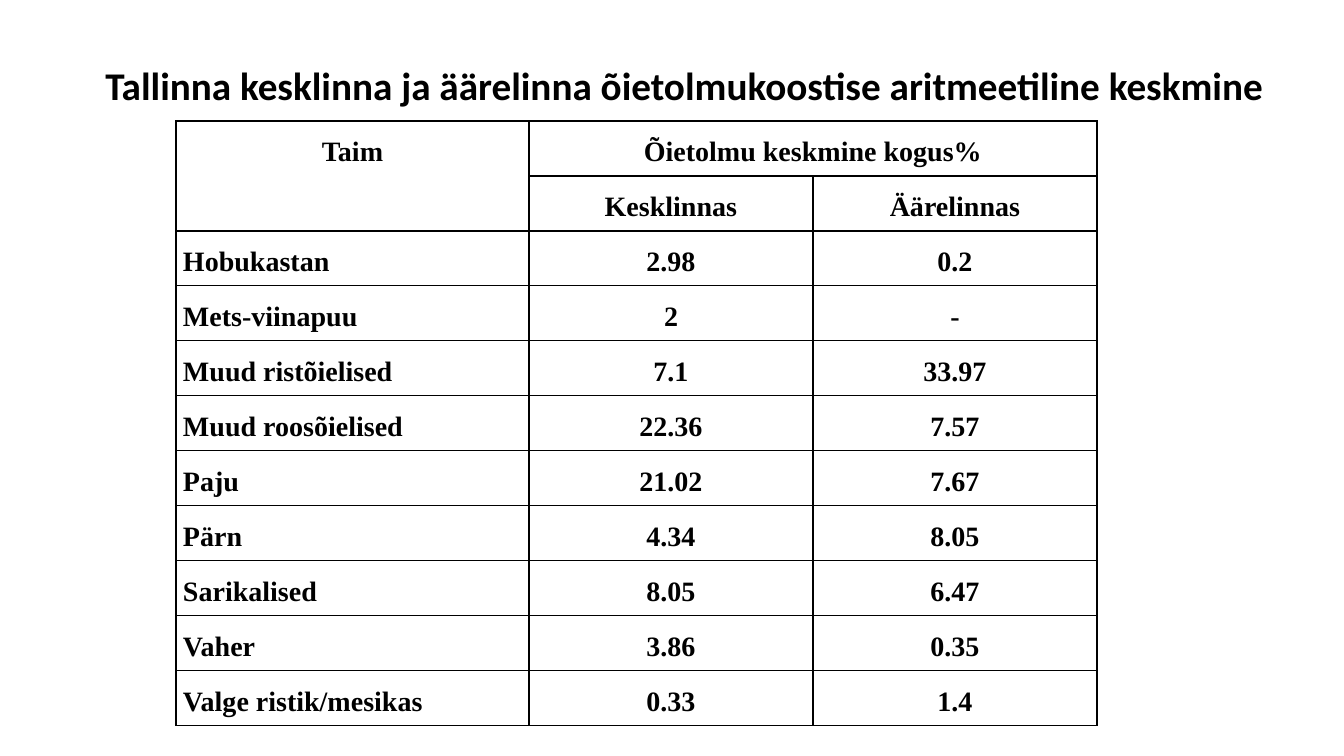
from dataclasses import dataclass

import pptx
import pptx.dml.color
import pptx.enum.text
import pptx.oxml
import pptx.oxml.ns
import pptx.util

PX = 914400 / 100.8
ALIGN = pptx.enum.text.PP_ALIGN
ANCHOR = pptx.enum.text.MSO_ANCHOR


@dataclass(frozen=True)
class Theme:
    ink: str = "000000"
    title_font: str = "Calibri"
    title_size: int = 28
    table_font: str = "Times New Roman"
    table_size: int = 20
    border: int = 1


THEME = Theme()
TITLE = "Tallinna kesklinna ja äärelinna õietolmukoostise aritmeetiline keskmine"
COLUMN_WIDTHS = (353, 284, 284)
ROW_HEIGHT = 55
HEADER_ROWS = 2
ROWS = [
    ("Taim", "Õietolmu keskmine kogus%", ""),
    ("", "Kesklinnas", "Äärelinnas"),
    ("Hobukastan", "2.98", "0.2"),
    ("Mets-viinapuu", "2", "-"),
    ("Muud ristõielised", "7.1", "33.97"),
    ("Muud roosõielised", "22.36", "7.57"),
    ("Paju", "21.02", "7.67"),
    ("Pärn", "4.34", "8.05"),
    ("Sarikalised", "8.05", "6.47"),
    ("Vaher", "3.86", "0.35"),
    ("Valge ristik/mesikas", "0.33", "1.4"),
]


def px(n):
    return pptx.util.Emu(round(n * PX))


def write(p, text, font, size, align, spacing):
    p.alignment = align
    p.line_spacing = spacing
    p.space_before = pptx.util.Pt(10)
    r = p.add_run()
    r.text = text
    r.font.name = font
    r.font.size = pptx.util.Pt(size)
    r.font.bold = True
    r.font.color.rgb = pptx.dml.color.RGBColor.from_string(THEME.ink)


def add_borders(cell):
    tc_pr = cell._tc.get_or_add_tcPr()
    ns = pptx.oxml.ns.nsdecls("a")
    for side in "LRTB":
        tc_pr.append(pptx.oxml.parse_xml(
            f'<a:ln{side} {ns} w="{pptx.util.Pt(THEME.border)}"><a:solidFill>'
            f'<a:srgbClr val="{THEME.ink}"/></a:solidFill></a:ln{side}>'))


def place_title(s, x, y, w, h):
    sp = s.shapes.title
    sp.left, sp.top, sp.width, sp.height = map(px, (x, y, w, h))
    tf = sp.text_frame
    tf.word_wrap = True
    tf.auto_size = pptx.enum.text.MSO_AUTO_SIZE.NONE
    tf.vertical_anchor = ANCHOR.MIDDLE
    tf.margin_left = tf.margin_right = tf.margin_top = tf.margin_bottom = 0
    write(tf.paragraphs[0], TITLE, THEME.title_font, THEME.title_size,
          ALIGN.CENTER, 0.9)


def place_pollen_table(s, x, y):
    frame = s.shapes.add_table(len(ROWS), len(COLUMN_WIDTHS), px(x), px(y),
                               px(sum(COLUMN_WIDTHS)), px(ROW_HEIGHT * len(ROWS)))
    table = frame.table
    table.first_row = table.horz_banding = False
    for column, width in zip(table.columns, COLUMN_WIDTHS):
        column.width = px(width)
    for i, values in enumerate(ROWS):
        table.rows[i].height = px(ROW_HEIGHT)
        for j, value in enumerate(values):
            cell = table.cell(i, j)
            cell.margin_left = cell.margin_right = px(7)
            cell.margin_top = cell.margin_bottom = 0
            cell.vertical_anchor = ANCHOR.TOP
            add_borders(cell)
            cell.fill.background()
            if value:
                is_name = j == 0 and i >= HEADER_ROWS
                write(cell.text_frame.paragraphs[0], value, THEME.table_font,
                      THEME.table_size,
                      ALIGN.JUSTIFY if is_name else ALIGN.CENTER, 1.5)
    table.cell(0, 0).merge(table.cell(1, 0))
    table.cell(0, 1).merge(table.cell(0, 2))


def main():
    prs = pptx.Presentation()
    prs.slide_width, prs.slide_height = px(1344), px(756)
    s = prs.slides.add_slide(prs.slide_layouts.get_by_name("Title Only"))
    place_title(s, 92, 62, 1184, 52)
    place_pollen_table(s, 176, 121)
    prs.save("out.pptx")


if __name__ == "__main__":
    main()
